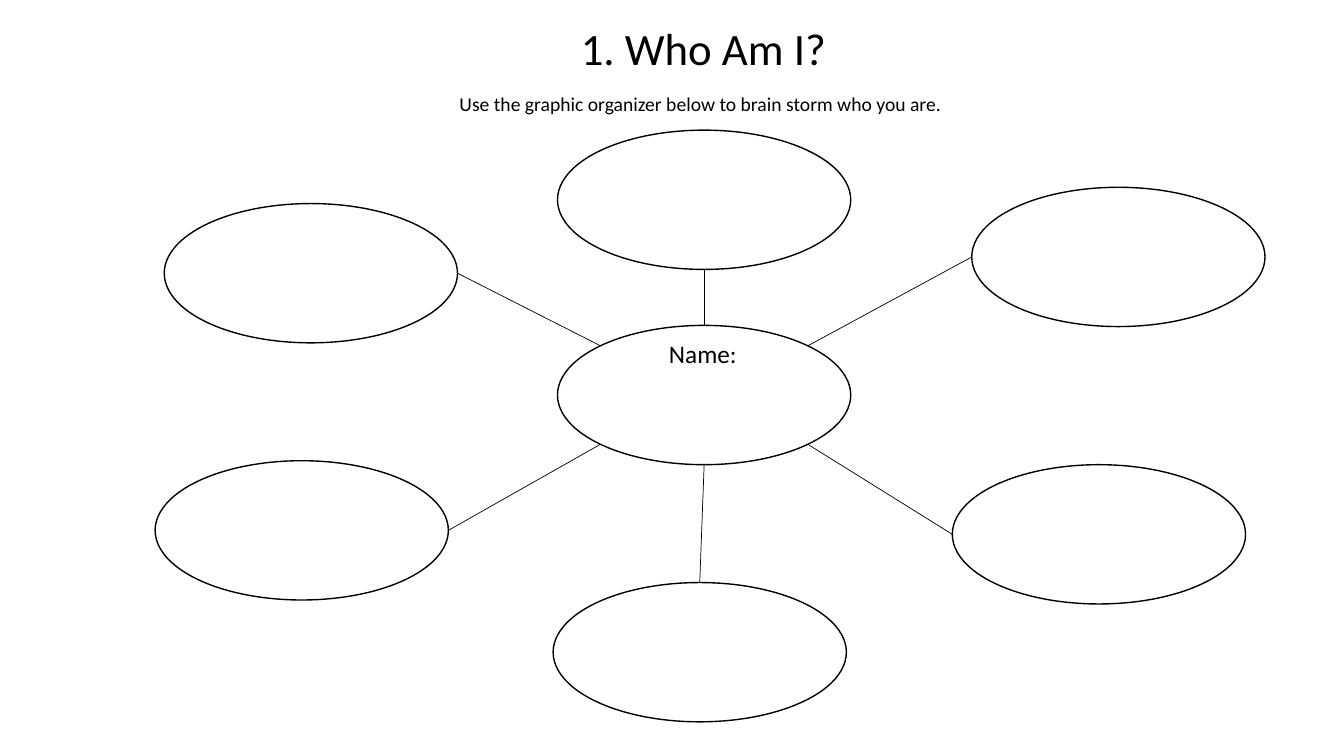
from dataclasses import dataclass
from math import hypot

from lxml.etree import SubElement
from pptx import Presentation
from pptx.dml.color import RGBColor as Rgb
from pptx.enum.shapes import MSO_CONNECTOR as Link, MSO_SHAPE as Shape
from pptx.enum.text import MSO_AUTO_SIZE as Fit, PP_ALIGN as Align
from pptx.oxml.ns import qn
from pptx.slide import Slide
from pptx.util import Cm, Pt


@dataclass(frozen=True)
class Theme:
    ink: Rgb = Rgb(0, 0, 0)
    face: str = "Calibri"
    title: int = 32
    name: int = 18
    hint: int = 14
    rim: float = 1
    link: float = 0.5


@dataclass(frozen=True)
class Oval:
    """An oval in cm; dx and dy give its side of the hub."""
    left: float
    top: float
    dx: int = 0
    dy: int = 0
    width: float = 7.39
    height: float = 3.51

    def spot(self, dx: int, dy: int) -> tuple[float, float]:
        """Return the point of the rim that lies towards (dx, dy)."""
        span = 2 * hypot(dx, dy)
        return (self.left + self.width * (0.5 + dx / span),
                self.top + self.height * (0.5 + dy / span))


@dataclass(frozen=True)
class Label:
    text: str
    box: tuple[float, float, float, float]
    size: int
    align: Align = Align.CENTER
    wrap: bool = False


THEME = Theme()
HUB = Oval(14.05, 8.2)
LEAVES = [
    Oval(4.14, 5.13, -1, -1),
    Oval(14.05, 3.28, 0, -1),
    Oval(24.49, 4.72, 1, -1),
    Oval(3.91, 11.61, -1, 1),
    Oval(13.94, 14.68, 0, 1),
    Oval(24, 11.71, 1, 1),
]
LABELS = [
    Label("1. Who Am I?", (14.35, 0.41, 6.76, 1.63), THEME.title),
    Label("Use the graphic organizer below to brain storm who you are.",
          (7.85, 2.18, 19.61, 0.86), THEME.hint, wrap=True),
    Label("Name:", (16.61, 8.41, 2.24, 1.02), THEME.name, Align.LEFT),
]


def draw_oval(slide: Slide, oval: Oval) -> None:
    box = map(Cm, (oval.left, oval.top, oval.width, oval.height))
    shape = slide.shapes.add_shape(Shape.OVAL, *box)
    shape.shadow.inherit = False
    shape.fill.background()
    shape.line.color.rgb = THEME.ink
    shape.line.width = Pt(THEME.rim)


def draw_link(slide: Slide, leaf: Oval) -> None:
    """Join the hub to the facing side, top or bottom of a leaf."""
    start = HUB.spot(leaf.dx, leaf.dy)
    end = leaf.spot(-leaf.dx, 0 if leaf.dx else -leaf.dy)
    line = slide.shapes.add_connector(Link.STRAIGHT, *map(Cm, start + end))
    line.line.color.rgb = THEME.ink
    line.line.width = Pt(THEME.link)
    SubElement(line._element.spPr, qn("a:effectLst"))


def draw_label(slide: Slide, label: Label) -> None:
    frame = slide.shapes.add_textbox(*map(Cm, label.box)).text_frame
    frame.word_wrap = label.wrap
    frame.auto_size = Fit.SHAPE_TO_FIT_TEXT
    para = frame.paragraphs[0]
    para.alignment = label.align
    run = para.add_run()
    run.text = label.text
    run.font.color.rgb = THEME.ink
    style = {"name": THEME.face, "size": Pt(label.size)}
    for key, value in style.items():
        setattr(run.font, key, value)


def main() -> None:
    deck = Presentation()
    deck.slide_width, deck.slide_height = Cm(33.87), Cm(19.05)
    slide = deck.slides.add_slide(deck.slide_layouts[6])
    draw_oval(slide, HUB)
    for leaf in LEAVES:
        draw_oval(slide, leaf)
        draw_link(slide, leaf)
    for label in LABELS:
        draw_label(slide, label)
    deck.save("out.pptx")


if __name__ == "__main__":
    main()
